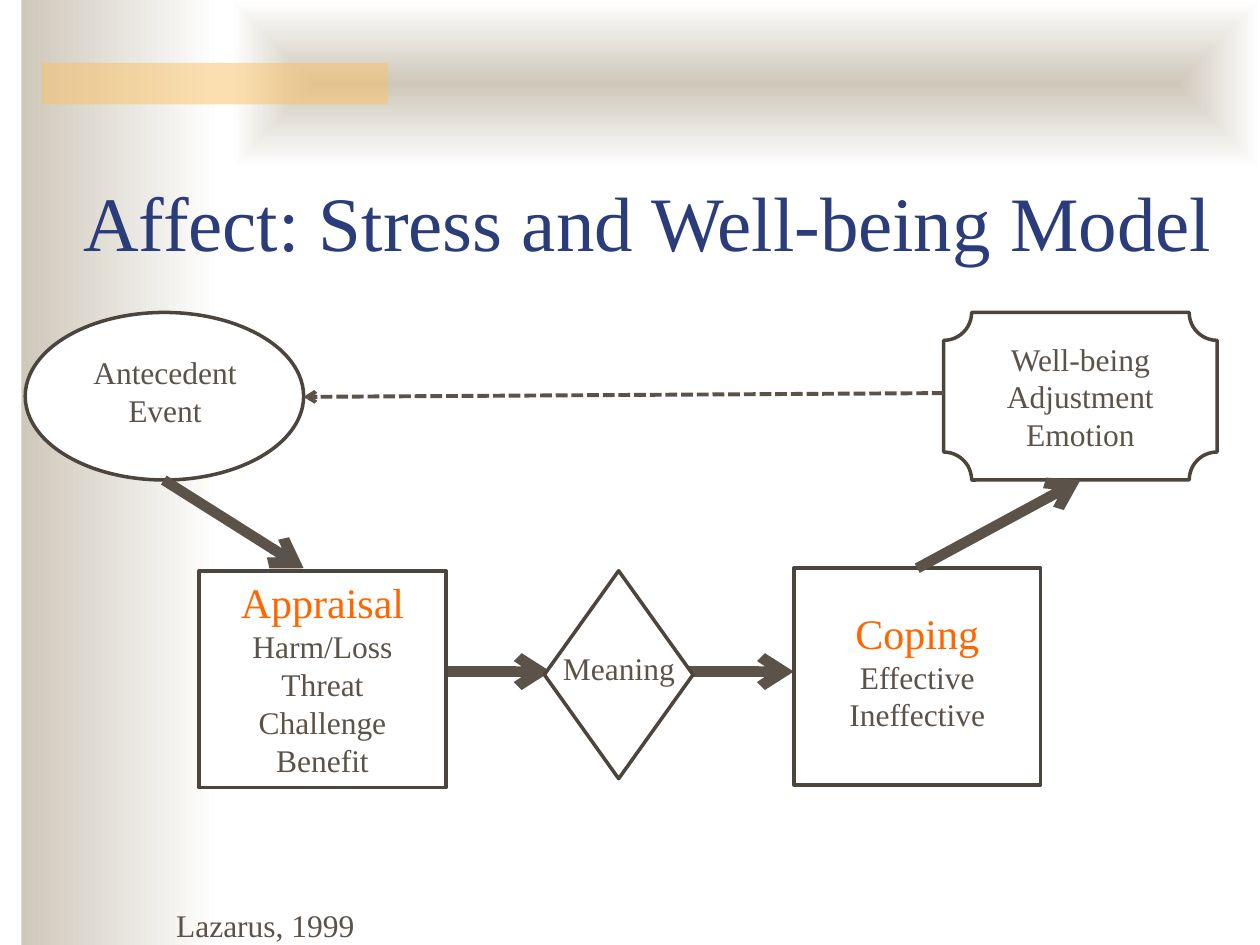
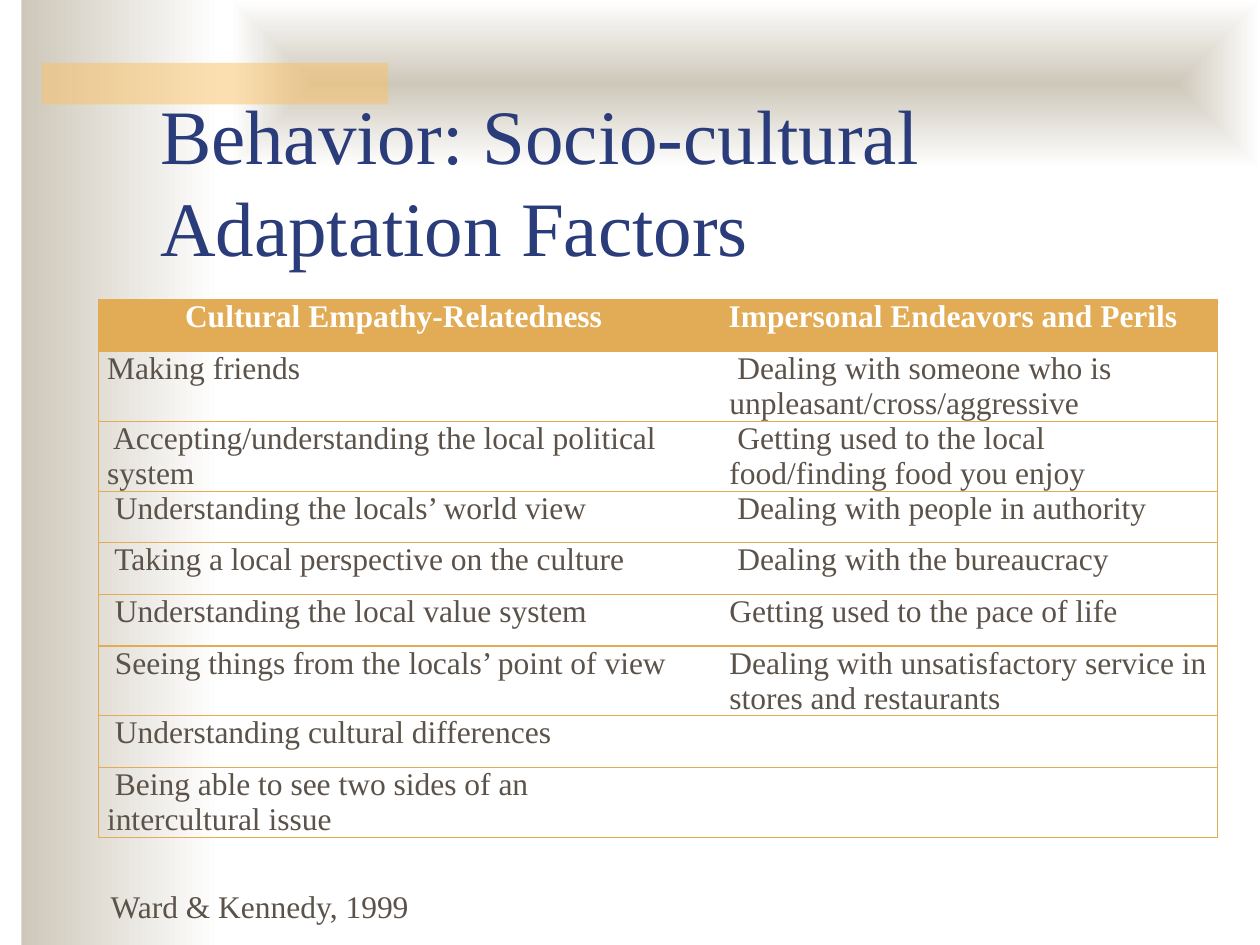
from dataclasses import dataclass
from typing import Optional

from lxml.etree import SubElement
from pptx import Presentation
from pptx.dml.color import RGBColor
from pptx.enum.dml import MSO_LINE_DASH_STYLE as Dash
from pptx.enum.shapes import MSO_CONNECTOR, MSO_SHAPE as Preset
from pptx.enum.text import MSO_ANCHOR as Anchor, MSO_AUTO_SIZE as AutoSize, PP_ALIGN as Align
from pptx.oxml import parse_xml
from pptx.oxml.ns import nsdecls, qn
from pptx.util import Inches, Pt

FONT = "Times New Roman"
NAVY, TEXT, OUTLINE, ORANGE = "2A3D7A", "5B5249", "4C453D", "FF6600"
WHITE, BEIGE, BAND, GOLD = "FFFFFF", "CEC8BA", "FAC164", "E1AC55"
LINEAR = '<a:lin ang="0" scaled="1"/>'
FROM_CENTRE = '<a:path path="rect"><a:fillToRect l="50000" t="50000" r="50000" b="50000"/></a:path>'


@dataclass
class Box:
    left: float
    top: float
    width: float
    height: float

    def lengths(self):
        return [Inches(value) for value in (self.left, self.top, self.width, self.height)]


@dataclass
class Node:
    preset: Preset
    box: Box
    lines: tuple = ()
    label_box: Optional[Box] = None
    heading: bool = False
    align: Align = Align.CENTER
    anchor: Anchor = Anchor.TOP


@dataclass
class Arrow:
    start: tuple
    end: tuple
    weight: float = 6
    dashed: bool = False


NODES = {
    "event": Node(Preset.OVAL, Box(0.2, 2.48, 2.21, 1.33), ("Antecedent Event",),
                  Box(0.48, 2.75, 1.66, 0.71)),
    "appraisal": Node(Preset.RECTANGLE, Box(1.58, 4.53, 1.96, 1.72),
                      ("Appraisal", "Harm/Loss", "Threat", "Challenge", "Benefit"), heading=True),
    "meaning": Node(Preset.DIAMOND, Box(4.32, 4.53, 1.18, 1.65), ("Meaning",),
                    Box(4.37, 5.1, 1.13, 0.4), align=Align.LEFT),
    "coping": Node(Preset.RECTANGLE, Box(6.3, 4.51, 1.96, 1.72),
                   ("Coping", "Effective", "Ineffective"), Box(6.44, 4.77, 1.68, 1.11), heading=True),
    "well-being": Node(Preset.PLAQUE, Box(7.49, 2.48, 2.17, 1.33),
                       ("Well-being", "Adjustment", "Emotion"), anchor=Anchor.MIDDLE),
}
ARROWS_BEHIND = (Arrow((3.26, 5.33), (4.37, 5.33)), Arrow((5.19, 5.33), (6.3, 5.33)))
EVENT_TO_APPRAISAL = Arrow((1.3, 3.81), (2.41, 4.51))
COPING_TO_WELL_BEING = Arrow((7.28, 4.51), (8.57, 3.81))
FEEDBACK = Arrow((7.49, 3.12), (2.41, 3.15), 2.25, True)

FACTORS = (
    ("Cultural Empathy-Relatedness", "Impersonal Endeavors and Perils"),
    ("Making friends", " Dealing with someone who is unpleasant/cross/aggressive"),
    (" Accepting/understanding the local political system",
     " Getting used to the local food/finding food you enjoy"),
    (" Understanding the locals’ world view", " Dealing with people in authority"),
    (" Taking a local perspective on the culture", " Dealing with the bureaucracy"),
    (" Understanding the local value system", "Getting used to the pace of life"),
    (" Seeing things from the locals’ point of view",
     "Dealing with unsatisfactory service in stores and restaurants"),
    (" Understanding cultural differences", ""),
    (" Being able to see two sides of an intercultural issue", ""),
)
COLUMN_WIDTHS = (4.69, 4.19)
ROW_HEIGHT = 0.41


def rgb(value: str) -> RGBColor:
    return RGBColor.from_string(value)


def style_font(font, size: float, color: str, bold: bool = False) -> None:
    font.name, font.size, font.bold = FONT, Pt(size), bold
    font.color.rgb = rgb(color)


def write_lines(frame, lines: tuple, align: Align = Align.LEFT, heading: bool = False) -> None:
    frame.word_wrap = True
    frame.text = "\n".join(lines)
    for index, paragraph in enumerate(frame.paragraphs):
        paragraph.alignment = align
        is_heading = heading and index == 0
        for run in paragraph.runs:
            style_font(run.font, 24 if is_heading else 18, ORANGE if is_heading else TEXT)


def add_label(slide, box: Box, lines: tuple, align: Align = Align.LEFT, heading: bool = False) -> None:
    write_lines(slide.shapes.add_textbox(*box.lengths()).text_frame, lines, align, heading)


def add_plain_shape(slide, preset: Preset, box: Box, fill: str, outline: Optional[str] = None):
    shape = slide.shapes.add_shape(preset, *box.lengths())
    shape.shadow.inherit = False
    shape.fill.solid()
    shape.fill.fore_color.rgb = rgb(fill)
    if outline:
        shape.line.color.rgb = rgb(outline)
        shape.line.width = Pt(2)
    else:
        shape.line.fill.background()
    return shape


def add_node(slide, node: Node):
    shape = add_plain_shape(slide, node.preset, node.box, WHITE, OUTLINE)
    if node.label_box:
        add_label(slide, node.label_box, node.lines, node.align, node.heading)
    else:
        shape.text_frame.vertical_anchor = node.anchor
        write_lines(shape.text_frame, node.lines, node.align, node.heading)
    return shape


def add_arrow(slide, arrow: Arrow):
    points = [Inches(value) for value in (*arrow.start, *arrow.end)]
    connector = slide.shapes.add_connector(MSO_CONNECTOR.STRAIGHT, *points)
    connector.line.color.rgb = rgb(TEXT)
    connector.line.width = Pt(arrow.weight)
    if arrow.dashed:
        connector.line.dash_style = Dash.SQUARE_DOT
    properties = connector.element.spPr
    SubElement(properties.find(qn("a:ln")), qn("a:tailEnd"), type="arrow")
    SubElement(properties, qn("a:effectLst"))
    return connector


def set_gradient(shape, direction: str) -> None:
    gradient = parse_xml(
        f'<a:gradFill {nsdecls("a")} rotWithShape="1"><a:gsLst>'
        f'<a:gs pos="0"><a:srgbClr val="{BEIGE}"/></a:gs>'
        f'<a:gs pos="100000"><a:srgbClr val="{WHITE}"/></a:gs>'
        f'</a:gsLst>{direction}</a:gradFill>')
    properties = shape.element.spPr
    properties.replace(properties.find(qn("a:solidFill")), gradient)


def decorate_master(presentation, slide) -> None:
    """Draw the shared bands once and move them to the back of the slide master."""
    side = add_plain_shape(slide, Preset.RECTANGLE, Box(0.17, 0, 1.58, 7.5), WHITE)
    top = add_plain_shape(slide, Preset.RECTANGLE, Box(1.83, 0, 8.17, 1.33), WHITE)
    accent = add_plain_shape(slide, Preset.RECTANGLE, Box(0.33, 0.5, 2.75, 0.33), BAND)
    set_gradient(side, LINEAR)
    set_gradient(top, FROM_CENTRE)
    color = accent.element.spPr.find(qn("a:solidFill"))[0]
    SubElement(color, qn("a:alpha"), val="50000")
    for position, band in enumerate((side, top, accent), start=2):
        presentation.slide_master.shapes.element.insert(position, band.element)


def add_titled_slide(presentation, title: str, box: Box):
    slide = presentation.slides.add_slide(presentation.slide_layouts[5])
    placeholder = slide.shapes.title
    placeholder.left, placeholder.top, placeholder.width, placeholder.height = box.lengths()
    frame = placeholder.text_frame
    frame.text = title
    frame.word_wrap = True
    frame.auto_size = AutoSize.NONE
    frame.vertical_anchor = Anchor.BOTTOM
    paragraph = frame.paragraphs[0]
    paragraph.alignment = Align.LEFT
    style_font(paragraph.runs[0].font, 44, NAVY)
    return slide


def set_borders(cell, first: bool, last: bool) -> None:
    properties = cell._tc.get_or_add_tcPr()
    for side, visible in (("L", first), ("R", last), ("T", True), ("B", True)):
        line = SubElement(properties, qn(f"a:ln{side}"), w=str(Pt(0.75)))
        if visible:
            SubElement(SubElement(line, qn("a:solidFill")), qn("a:srgbClr"), val=GOLD)
        else:
            SubElement(line, qn("a:noFill"))


def fill_cell(cell, text: str, row: int, column: int) -> None:
    header = row == 0
    cell.margin_left = cell.margin_right = Inches(0.07)
    cell.margin_top = cell.margin_bottom = 0
    set_borders(cell, column == 0, column == len(COLUMN_WIDTHS) - 1)
    if header:
        cell.fill.solid()
        cell.fill.fore_color.rgb = rgb(GOLD)
    else:
        cell.fill.background()
    cell.text = text
    paragraph = cell.text_frame.paragraphs[0]
    paragraph.alignment = Align.CENTER if header else Align.LEFT
    if column and not header:
        paragraph._p.get_or_add_pPr().set("marL", str(Inches(0.25)))
    style_font(paragraph.font, 18, TEXT)
    for run in paragraph.runs:
        style_font(run.font, 18, WHITE if header else TEXT, header)


def add_factor_table(slide) -> None:
    box = Box(0.78, 2.38, sum(COLUMN_WIDTHS), ROW_HEIGHT * len(FACTORS))
    table = slide.shapes.add_table(len(FACTORS), len(COLUMN_WIDTHS), *box.lengths()).table
    table.horz_banding = table.first_row = False
    for column, width in zip(table.columns, COLUMN_WIDTHS):
        column.width = Inches(width)
    for row, texts in enumerate(FACTORS):
        table.rows[row].height = Inches(ROW_HEIGHT)
        for column, text in enumerate(texts):
            fill_cell(table.cell(row, column), text, row, column)


def build_stress_model(slide) -> None:
    for arrow in ARROWS_BEHIND:
        add_arrow(slide, arrow)
    shapes = {name: add_node(slide, node) for name, node in NODES.items()}
    add_arrow(slide, EVENT_TO_APPRAISAL)
    outcome = add_arrow(slide, COPING_TO_WELL_BEING)
    outcome.begin_connect(shapes["coping"], 0)
    outcome.end_connect(shapes["well-being"], 2)
    add_arrow(slide, FEEDBACK)
    add_label(slide, Box(1.3, 7.14, 4.35, 0.4), ("Lazarus, 1999",))


def main() -> None:
    presentation = Presentation()
    presentation.slide_width, presentation.slide_height = Inches(10), Inches(7.5)
    model = add_titled_slide(presentation, "Affect: Stress and Well-being Model",
                             Box(0.56, 0.92, 9.44, 1.25))
    decorate_master(presentation, model)
    build_stress_model(model)
    factors = add_titled_slide(presentation, "Behavior: Socio-cultural Adaptation Factors",
                               Box(1.17, 0.96, 8.5, 1.25))
    add_factor_table(factors)
    add_label(factors, Box(0.78, 6.99, 4.88, 0.4), ("Ward & Kennedy, 1999",))
    presentation.save("out.pptx")


if __name__ == "__main__":
    main()
